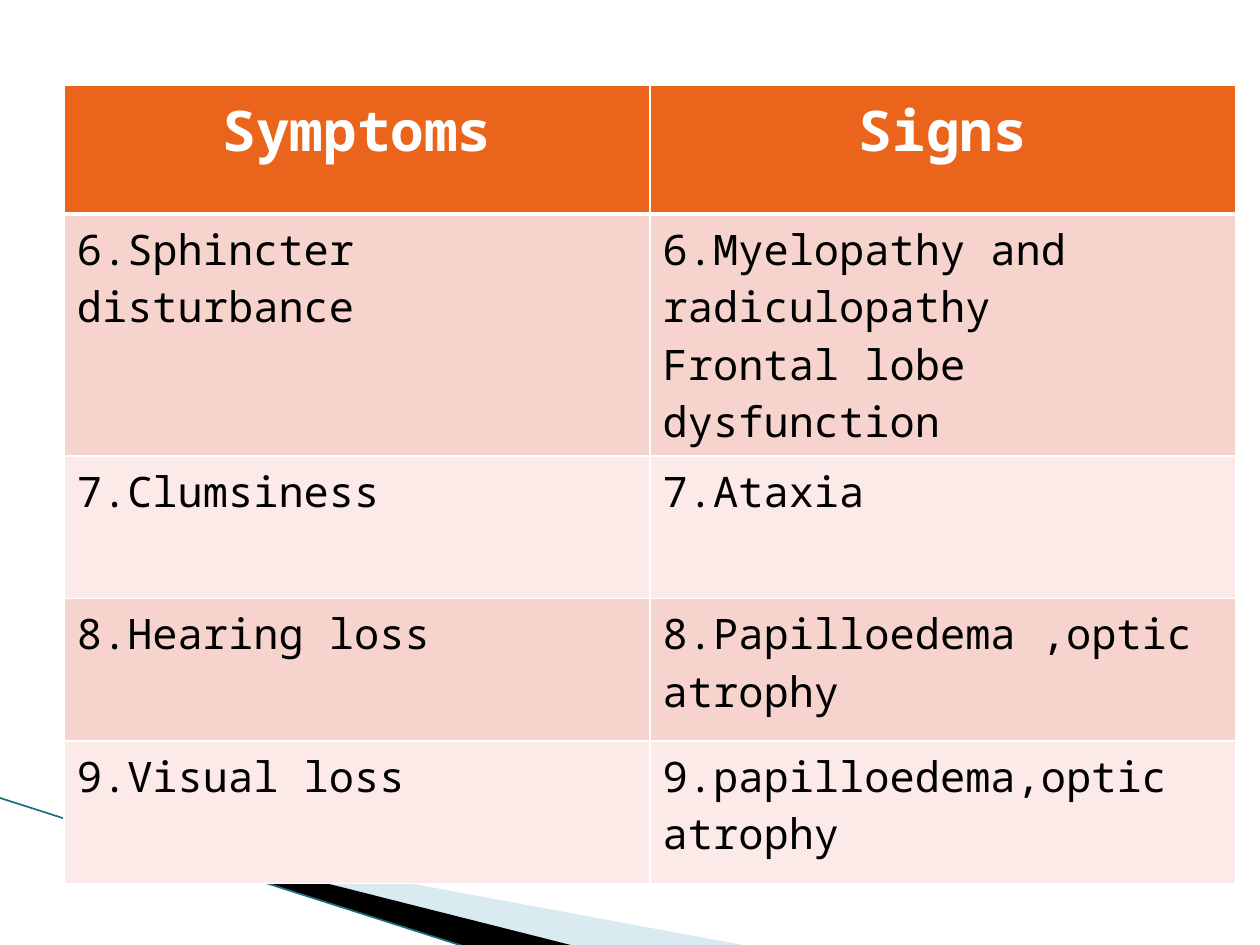
import pptx
import pptx.util
from lxml import etree
from pptx.dml.color import RGBColor
from pptx.enum.shapes import MSO_CONNECTOR
from pptx.enum.text import PP_ALIGN
from pptx.oxml.ns import qn
from pptx.util import Inches, Pt

COLORS = {
    "header": "EB641B",
    "band_dark": "F7D3CD",
    "band_light": "FBEAE8",
    "white": "FFFFFF",
    "black": "000000",
    "swoosh": "A0CBDC",
    "edge": "1B6E80",
}
FONT = "Noto Sans Mono"
FINDINGS = [
    ("Symptoms", "Signs"),
    ("6.Sphincter disturbance",
     "6.Myelopathy and radiculopathy\nFrontal lobe dysfunction"),
    ("7.Clumsiness", "7.Ataxia"),
    ("8.Hearing loss", "8.Papilloedema ,optic atrophy"),
    ("9.Visual loss", "9.papilloedema,optic atrophy"),
]
ROW_HEIGHTS = [1.02, 1.52, 1.13, 1.13, 1.13]


def set_frame(freeform, left, top, width, height):
    """Change the frame of a freeform and leave its outline in place."""
    shifts = {"x": freeform.left - left, "y": freeform.top - top}
    outline = freeform._element.find(".//" + qn("a:path"))
    outline.set("w", str(width))
    outline.set("h", str(height))
    for point in outline.iter(qn("a:pt")):
        for axis, shift in shifts.items():
            point.set(axis, str(int(point.get(axis)) + shift))
    freeform.left, freeform.top = left, top
    freeform.width, freeform.height = width, height


def add_swoosh(slide, left, top, offsets, frame, color, opacity=100):
    """Draw a filled outline; offsets and frame are inches from left and top."""
    points = [(Inches(left + x), Inches(top + y)) for x, y in offsets]
    builder = slide.shapes.build_freeform(*points[0])
    builder.add_line_segments(points[1:], close=True)
    swoosh = builder.convert_to_shape()
    x, y, width, height = frame
    set_frame(swoosh, Inches(left + x), Inches(top + y),
              Inches(width), Inches(height))
    swoosh.shadow.inherit = False
    swoosh.fill.solid()
    swoosh.fill.fore_color.rgb = rgb(color)
    swoosh.line.fill.background()
    if opacity < 100:
        tint = swoosh.fill._xPr.find(".//" + qn("a:srgbClr"))
        etree.SubElement(tint, qn("a:alpha"), val=str(opacity * 1000))


def rgb(name):
    return RGBColor.from_string(COLORS[name])


def add_corner_decoration(slide, left, top):
    add_swoosh(slide, left, top,
               [(0.55, 0.18), (5.95, 1.18), (4.56, 1.18), (0.55, 0.17)],
               (0.78, -0.86, 4.16, 1.58), "swoosh", opacity=40)
    add_swoosh(slide, left, top,
               [(0.53, 0.16), (4.57, 1.18), (3.72, 1.19), (0.54, 0.17)],
               (-0.06, 0, 4.16, 0.92), "black")
    edge = slide.shapes.add_connector(
        MSO_CONNECTOR.STRAIGHT, Inches(left - 0.01), Inches(top),
        Inches(left + 3.71), Inches(top + 1.19))
    edge.line.color.rgb = rgb("edge")
    edge.line.width = Pt(0.95)
    etree.SubElement(edge._element.spPr, qn("a:effectLst"))


def set_borders(cell, top, bottom):
    """Give a cell white borders, 1 pt at the sides."""
    properties = cell._tc.get_or_add_tcPr()
    for tag, width in (("lnL", 1), ("lnR", 1), ("lnT", top), ("lnB", bottom)):
        border = etree.SubElement(properties, qn("a:" + tag), w=str(Pt(width)))
        fill = etree.SubElement(border, qn("a:solidFill"))
        etree.SubElement(fill, qn("a:srgbClr"), val=COLORS["white"])


def format_cell(cell, row):
    is_header = row == 0
    set_borders(cell, top=3 if row == 1 else 1, bottom=3 if is_header else 1)
    band = "band_dark" if row % 2 else "band_light"
    cell.fill.solid()
    cell.fill.fore_color.rgb = rgb("header" if is_header else band)
    for paragraph in cell.text_frame.paragraphs:
        paragraph.alignment = PP_ALIGN.CENTER if is_header else PP_ALIGN.LEFT
        paragraph.font.name = FONT
        paragraph.font.size = Pt(32 if is_header else 24)
        paragraph.font.bold = is_header
        paragraph.font.color.rgb = rgb("white" if is_header else "black")


def add_findings_table(slide, left, top, width):
    columns = len(FINDINGS[0])
    table = slide.shapes.add_table(
        len(FINDINGS), columns, Inches(left), Inches(top),
        Inches(width), Inches(sum(ROW_HEIGHTS))).table
    for column in table.columns:
        column.width = Inches(width / columns)
    for row, (findings, height) in enumerate(zip(FINDINGS, ROW_HEIGHTS)):
        table.rows[row].height = Inches(height)
        for column, finding in enumerate(findings):
            cell = table.cell(row, column)
            cell.text = finding
            format_cell(cell, row)


def main():
    presentation = pptx.Presentation()
    presentation.slide_width = Inches(10)
    presentation.slide_height = Inches(7.5)
    slide = presentation.slides.add_slide(presentation.slide_layouts[6])
    add_corner_decoration(slide, 0, 6.33)
    add_findings_table(slide, 0.51, 0.68, 9.3)
    presentation.save("out.pptx")


if __name__ == "__main__":
    main()
